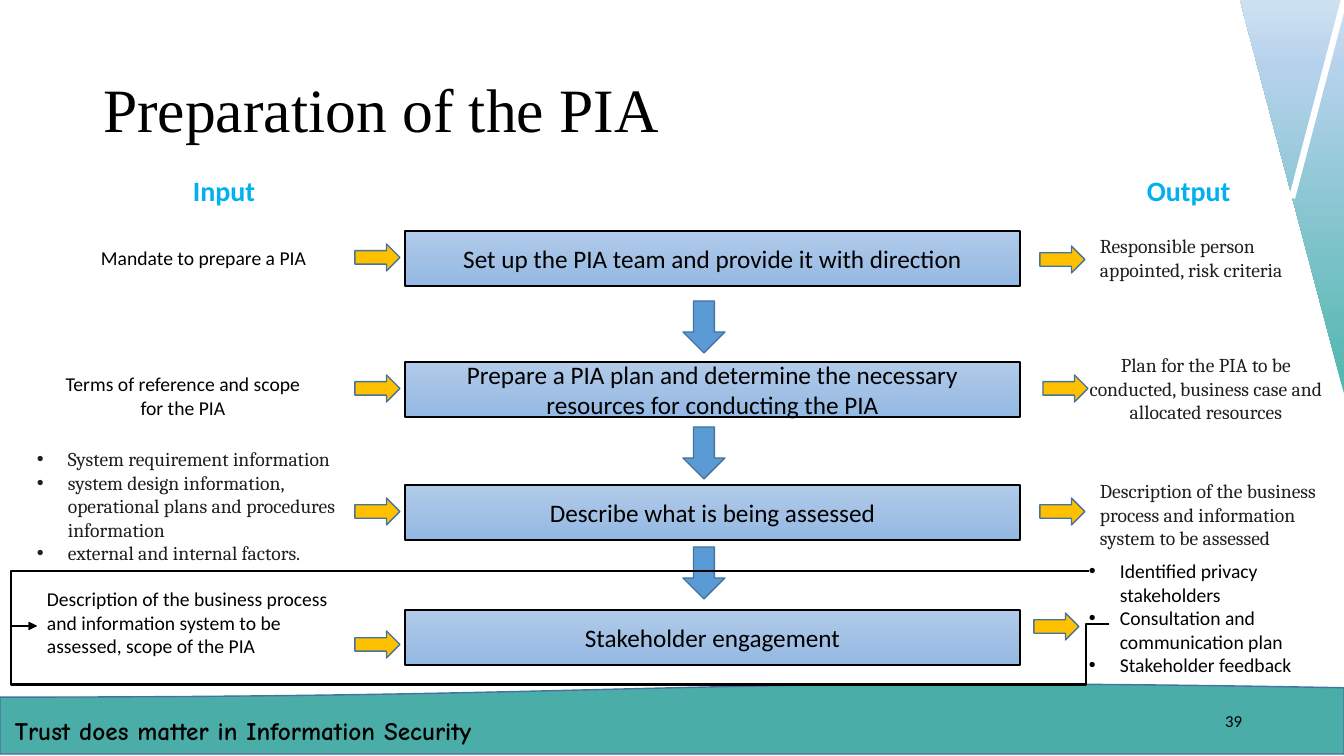
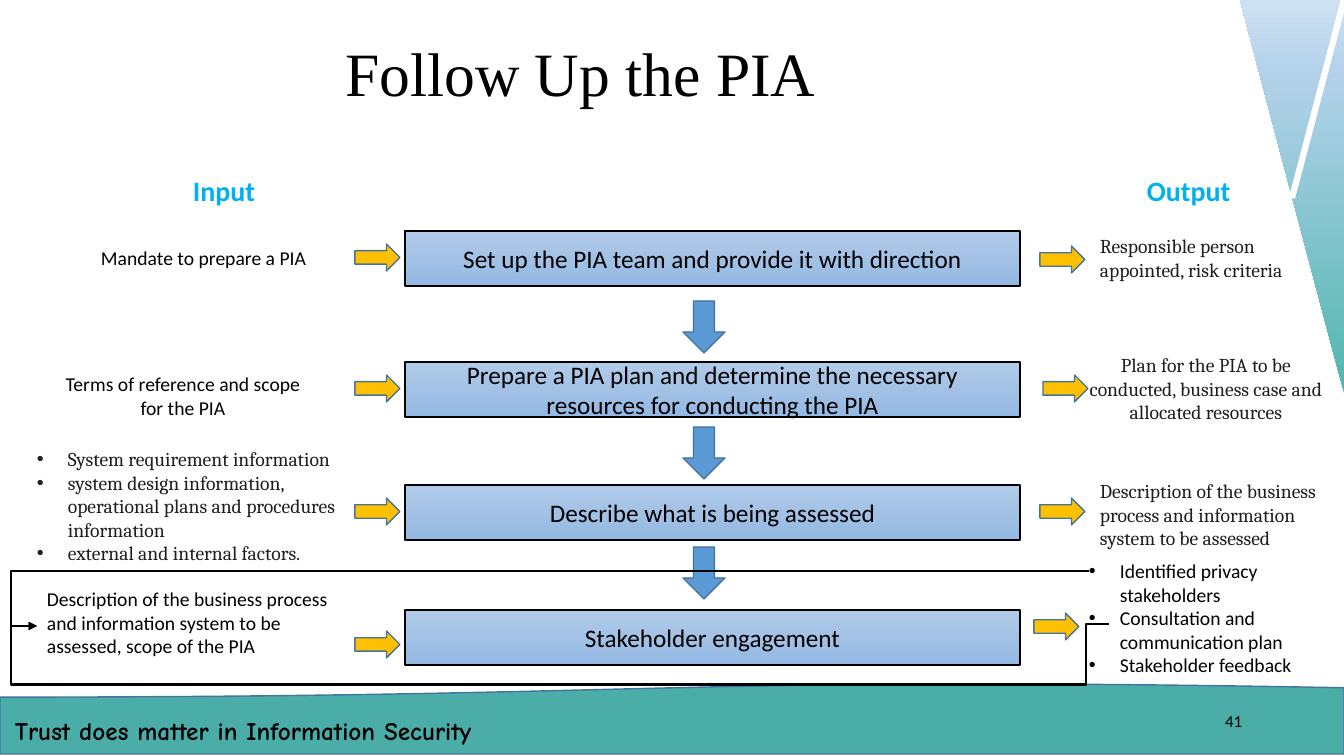
"""Build the two privacy impact assessment (PIA) process slides."""
import pptx
import pptx.dml.color
import pptx.enum.shapes
import pptx.enum.text
import pptx.oxml
import pptx.oxml.ns
import pptx.util

SHAPE = pptx.enum.shapes.MSO_SHAPE
CONNECTOR = pptx.enum.shapes.MSO_CONNECTOR
ALIGN = pptx.enum.text.PP_ALIGN
ANCHOR = pptx.enum.text.MSO_ANCHOR
qn = pptx.oxml.ns.qn

BLACK, WHITE, INK = "000000", "FFFFFF", "221E1F"
TEAL, OUTLINE = "4AADA7", "43739E"
STEP_STOPS = [(0, "B1CBE9"), (50, "A3C1E5"), (100, "93B9E4")]
CORNER_STOPS = [(0, "4FB6AD"), (83, "B5D2EC"), (100, "CEE1F2")]

TITLE = {"name": "Times New Roman", "size": 44, "color": BLACK}
MOTTO = {"name": "Comic Neue", "size": 18, "bold": True, "color": BLACK}
NUMBER = {"name": "Calibri", "size": 12, "color": BLACK}
HEADING = {"name": "Calibri", "size": 20, "bold": True, "color": "00B0F0"}
STEP = {"name": "Calibri", "size": 18, "color": BLACK}
PLAIN = {"name": "Calibri", "size": 14, "color": BLACK}
SERIF = {"name": "Cambria", "size": 14, "color": INK}

STEP_LEFT, STEP_WIDTH, STEP_HEIGHT = 405, 615, 55
STEPS = [
    (231, "Set up the PIA team and provide it with direction"),
    (362, "Prepare a PIA plan and determine the necessary resources for conducting the PIA"),
    (485, "Describe what is being assessed"),
    (610, "Stakeholder engagement"),
]
DOWN_ARROW_TOPS = [301, 427, 547]
INPUT_ARROWS = [(355, 244), (355, 375), (355, 498), (355, 631)]
OUTPUT_ARROWS = [(1040, 246), (1043, 375), (1040, 498), (1034, 613)]

HEADINGS = [((183, 169, 90, 44), "Input"), ((1137, 169, 116, 44), "Output")]
NOTES = [
    ((91, 241, 235, 34), PLAIN, ALIGN.LEFT, ["Mandate to prepare a PIA"]),
    ((48, 367, 270, 57), PLAIN, ALIGN.CENTER, ["Terms of reference and scope for the PIA"]),
    ((37, 582, 330, 82), PLAIN, ALIGN.LEFT, [
        "Description of the business process and information system to be assessed, scope of the PIA"]),
    ((1090, 229, 247, 57), SERIF, ALIGN.LEFT, ["Responsible person appointed, risk criteria"]),
    ((1079, 348, 254, 82), SERIF, ALIGN.CENTER, [
        "Plan for the PIA to be conducted, business case and allocated resources"]),
    ((1090, 474, 253, 82), SERIF, ALIGN.LEFT, [
        "Description of the business process and information system to be assessed"]),
]
BULLET_NOTES = [
    ((27, 442, 349, 129), SERIF, [
        "System requirement information",
        "system design information, operational plans and procedures information",
        "external and internal factors."]),
    ((1079, 554, 280, 129), PLAIN, [
        "Identified privacy stakeholders",
        "Consultation and communication plan",
        "Stakeholder feedback"]),
]
FEEDBACK_END = (37, 626)
FEEDBACK_ROUTES = [
    ((1089, 571), "bentConnector3", [("x", 11)]),
    ((1109, 624), "bentConnector5", [("x", 1086), ("y", 685), ("x", 11)]),
]


def px(length):
    """Turn pixels into EMU."""
    return pptx.util.Emu(round(length * 914400 / 100.8))


def rgb(value):
    """Turn a hex string into a colour."""
    return pptx.dml.color.RGBColor.from_string(value)


def place(shape, box):
    """Move and size a shape to a pixel box."""
    for side, length in zip(("left", "top", "width", "height"), box):
        setattr(shape, side, px(length))


def write(frame, lines, style, align=ALIGN.LEFT, anchor=ANCHOR.TOP, bullets=False):
    """Fill a text frame with paragraphs of one style."""
    frame.word_wrap = True
    frame.vertical_anchor = anchor
    for index, line in enumerate(lines):
        paragraph = frame.paragraphs[0] if index == 0 else frame.add_paragraph()
        paragraph.alignment = align
        if bullets:
            properties = paragraph._p.get_or_add_pPr()
            properties.set("marL", str(px(31)))
            properties.set("indent", str(-px(31)))
            font = properties.makeelement(qn("a:buFont"), {"typeface": "Arial"})
            mark = properties.makeelement(qn("a:buChar"), {"char": "•"})
            properties.extend([font, mark])
        run = paragraph.add_run()
        run.text = line
        for key, value in style.items():
            if key == "color":
                run.font.color.rgb = rgb(value)
            else:
                setattr(run.font, key, pptx.util.Pt(value) if key == "size" else value)


def add_text(slide, box, lines, style, **options):
    """Add a text box."""
    note = slide.shapes.add_textbox(*map(px, box))
    write(note.text_frame, lines, style, **options)
    return note


def set_gradient(shape, stops):
    """Fill a shape from top to bottom with colour stops."""
    shape.fill.gradient()
    shape.fill.gradient_angle = 270
    stop_list = shape.element.spPr.find(".//" + qn("a:gsLst"))
    for stop in list(stop_list):
        stop_list.remove(stop)
    for position, color in stops:
        stop = stop_list.makeelement(qn("a:gs"), {"pos": str(position * 1000)})
        stop.append(stop.makeelement(qn("a:srgbClr"), {"val": color}))
        stop_list.append(stop)


def add_shape(slide, kind, box, fill, line=None):
    """Add a preset shape with a plain or gradient fill."""
    shape = slide.shapes.add_shape(kind, *map(px, box))
    shape.shadow.inherit = False
    if isinstance(fill, str):
        shape.fill.solid()
        shape.fill.fore_color.rgb = rgb(fill)
    else:
        set_gradient(shape, fill)
    if line:
        shape.line.color.rgb = rgb(line)
        shape.line.width = pptx.util.Pt(1)
    else:
        shape.line.fill.background()
    return shape


def add_line(slide, kind, start, end, color, width):
    """Add a connector without shadow."""
    line = slide.shapes.add_connector(kind, *map(px, start + end))
    line.line.color.rgb = rgb(color)
    line.line.width = pptx.util.Pt(width)
    properties = line.element.spPr
    properties.append(properties.makeelement(qn("a:effectLst"), {}))
    return line


def add_feedback(slide, start, preset, bends):
    """Add a bent arrow that turns at the given coordinates."""
    route = add_line(slide, CONNECTOR.ELBOW, start, FEEDBACK_END, BLACK, 1.5)
    geometry = route.element.spPr.find(qn("a:prstGeom"))
    geometry.set("prst", preset)
    guides = geometry.find(qn("a:avLst"))
    for number, (axis, bend) in enumerate(bends, 1):
        side = "xy".index(axis)
        share = (bend - start[side]) / (FEEDBACK_END[side] - start[side])
        guides.append(guides.makeelement(
            qn("a:gd"), {"name": f"adj{number}", "fmla": f"val {round(share * 100000)}"}))
    outline = route.line._get_or_add_ln()
    outline.append(outline.makeelement(qn("a:tailEnd"), {"type": "triangle"}))


def decorate(layout, slide):
    """Draw the band, corner and motto and move them to the layout."""
    band = add_shape(slide, SHAPE.FLOWCHART_DOCUMENT, (0, 683, 1344, 71), TEAL, OUTLINE)
    corner = add_shape(slide, SHAPE.RIGHT_TRIANGLE, (1240, 0, 105, 397), CORNER_STOPS)
    band.rotation = corner.rotation = 180
    streak = add_line(slide, CONNECTOR.STRAIGHT, (1344, 0), (1292, 198), WHITE, 4.5)
    motto = add_text(slide, (5, 710, 567, 40),
                     ["Trust does matter in Information Security"], MOTTO)
    for part in (band, corner, streak, motto):
        layout.shapes.element.append(part.element)


def add_process(slide):
    """Draw the four steps with their inputs, outputs and feedback."""
    for box, lines_style, lines in BULLET_NOTES:
        add_text(slide, box, lines, lines_style, bullets=True)
    for top, label in STEPS:
        step = add_shape(slide, SHAPE.RECTANGLE,
                         (STEP_LEFT, top, STEP_WIDTH, STEP_HEIGHT), STEP_STOPS, BLACK)
        write(step.text_frame, [label], STEP, ALIGN.CENTER, ANCHOR.MIDDLE)
    for top in DOWN_ARROW_TOPS:
        add_shape(slide, SHAPE.DOWN_ARROW, (683, top, 42, 52), "5B9BD5", OUTLINE)
    for left, top in INPUT_ARROWS + OUTPUT_ARROWS:
        add_shape(slide, SHAPE.RIGHT_ARROW, (left, top, 45, 27), "FFC000", OUTLINE)
    for box, style, align, lines in NOTES:
        add_text(slide, box, lines, style, align=align)
    for box, heading in HEADINGS:
        add_text(slide, box, [heading], HEADING)
    for start, preset, bends in FEEDBACK_ROUTES:
        add_feedback(slide, start, preset, bends)


def add_slide(deck, layout, title, title_box, number):
    """Add a slide with its title, number and process."""
    slide = deck.slides.add_slide(layout)
    place(slide.shapes.title, title_box)
    write(slide.shapes.title.text_frame, [title], TITLE, anchor=ANCHOR.MIDDLE)
    slide.shapes.title.text_frame.paragraphs[0].line_spacing = 0.9
    add_text(slide, (950, 701, 302, 40), [number], NUMBER,
             align=ALIGN.RIGHT, anchor=ANCHOR.MIDDLE)
    add_process(slide)
    return slide


def main():
    """Build and save the deck."""
    deck = pptx.Presentation()
    deck.slide_width, deck.slide_height = px(1344), px(756)
    layout = deck.slide_layouts[5]
    preparation = add_slide(deck, layout, "Preparation of the PIA", (93, 40, 1159, 146), "39")
    decorate(layout, preparation)
    add_slide(deck, layout, "Follow Up the PIA", (335, 4, 608, 146), "41")
    deck.save("out.pptx")


if __name__ == "__main__":
    main()
